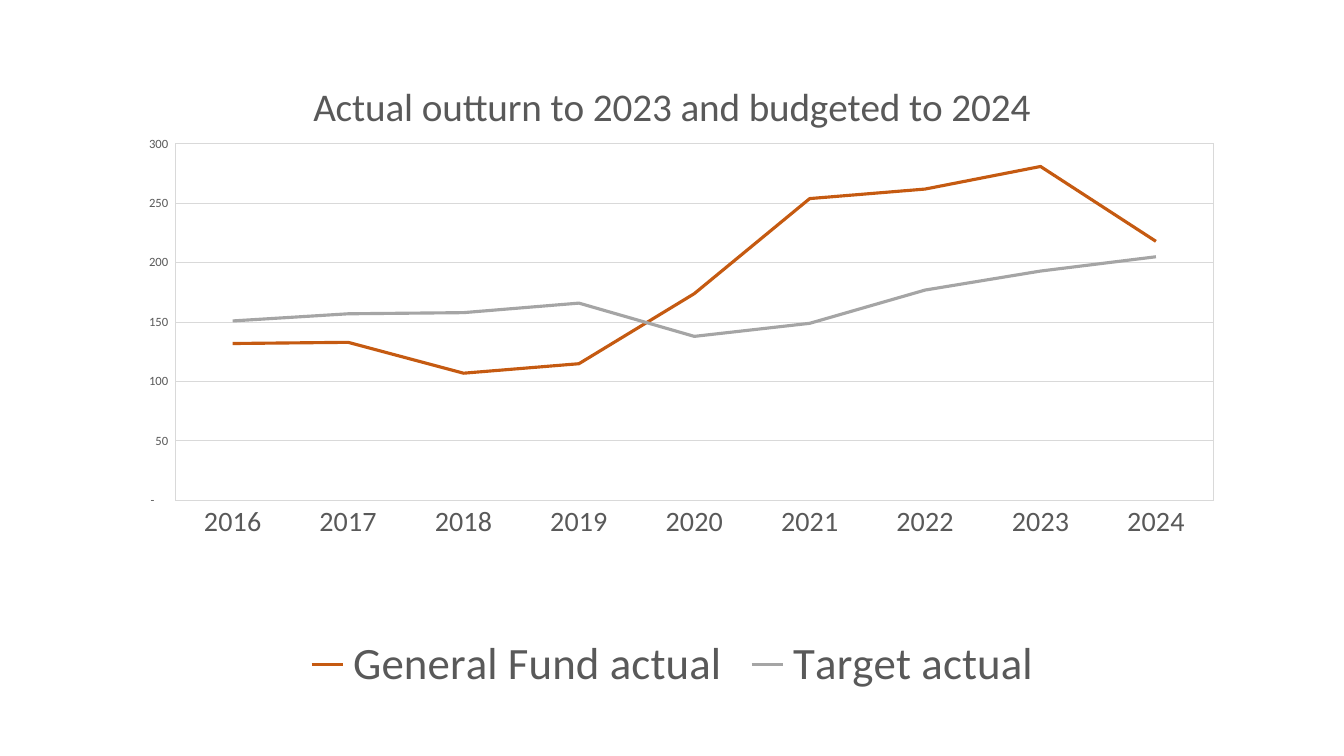
from dataclasses import dataclass

from lxml import etree
from pptx import Presentation
from pptx.chart.chart import Chart
from pptx.chart.data import CategoryChartData
from pptx.dml.color import RGBColor
from pptx.enum.chart import XL_CHART_TYPE, XL_LEGEND_POSITION, XL_TICK_MARK
from pptx.oxml import parse_xml
from pptx.oxml.ns import nsdecls, qn
from pptx.util import Inches, Pt

LINE_CHART = XL_CHART_TYPE.LINE
LEGEND_BOTTOM = XL_LEGEND_POSITION.BOTTOM
NO_TICKS = XL_TICK_MARK.NONE
BLANK_LAYOUT = 6


@dataclass(frozen=True)
class Theme:
    font: str = "Calibri"
    text: str = "595959"
    grid: str = "D9D9D9"
    title_size: int = 28
    year_size: int = 20
    amount_size: int = 9
    legend_size: int = 32
    grid_width: float = 0.75
    series_width: float = 2.25


@dataclass(frozen=True)
class Fund:
    name: str
    amounts: tuple[int, ...]
    color: str


THEME = Theme()
TITLE = "Actual outturn to 2023 and budgeted to 2024"
YEARS = [str(year) for year in range(2016, 2025)]
AMOUNT_FORMAT = '_-* #,##0_-;\\-* #,##0_-;_-* "-"??_-;_-@_'
FUNDS = (
    Fund("General Fund actual", (132, 133, 107, 115, 174, 254, 262, 281, 218), "C55A11"),
    Fund("Target actual", (151, 157, 158, 166, 138, 149, 177, 193, 205), "A5A5A5"),
)


def style_font(font, size: int) -> None:
    font.name = THEME.font
    font.size = Pt(size)
    font.bold = False
    font.color.rgb = RGBColor.from_string(THEME.text)


def style_line(line, color: str, width: float) -> None:
    line.color.rgb = RGBColor.from_string(color)
    line.width = Pt(width)


def set_layout(parent: etree._Element, index: int, **settings: str | float) -> None:
    """Place a chart part by fractions of the chart's size."""
    for layout in parent.findall(qn("c:layout")):
        parent.remove(layout)
    items = "".join(f'<c:{key} val="{value}"/>' for key, value in settings.items())
    parent.insert(index, parse_xml(
        f'<c:layout {nsdecls("c")}><c:manualLayout>{items}</c:manualLayout></c:layout>'))


def style_title(chart: Chart) -> None:
    chart.has_title = True
    heading = chart.chart_title.text_frame
    heading.text = TITLE
    style_font(heading.paragraphs[0].font, THEME.title_size)
    set_layout(chart.chart_title._element, 1, xMode="edge", yMode="edge", x=0.19, y=0.04)


def style_axes(chart: Chart) -> None:
    years, amounts = chart.category_axis, chart.value_axis
    for axis, size in ((years, THEME.year_size), (amounts, THEME.amount_size)):
        axis.major_tick_mark = axis.minor_tick_mark = NO_TICKS
        style_font(axis.tick_labels.font, size)
    style_line(years.format.line, THEME.grid, THEME.grid_width)
    amounts.format.line.fill.background()
    amounts.minimum_scale, amounts.maximum_scale, amounts.major_unit = 0, 300, 50
    amounts.tick_labels.number_format = AMOUNT_FORMAT
    amounts.tick_labels.number_format_is_linked = False
    style_line(amounts.major_gridlines.format.line, THEME.grid, THEME.grid_width)


def style_plot(chart: Chart) -> None:
    plot = chart.plots[0]
    plot.vary_by_categories = False
    for series, fund in zip(plot.series, FUNDS):
        series.smooth = False
        style_line(series.format.line, fund.color, THEME.series_width)

    # Plot position and border
    plot_area = chart._chartSpace.chart.plotArea
    set_layout(plot_area, 0, layoutTarget="inner", xMode="edge", yMode="edge",
               x=0.079, y=0.149, w=0.879, h=0.544)
    plot_area.append(parse_xml(
        f'<c:spPr {nsdecls("c", "a")}><a:noFill/><a:ln w="{Pt(THEME.grid_width)}">'
        f'<a:solidFill><a:srgbClr val="{THEME.grid}"/></a:solidFill></a:ln></c:spPr>'))


def style_legend(chart: Chart) -> None:
    chart.has_legend = True
    chart.legend.position = LEGEND_BOTTOM
    chart.legend.include_in_layout = False
    style_font(chart.legend.font, THEME.legend_size)


def main() -> None:
    deck = Presentation()
    deck.slide_width, deck.slide_height = Inches(13.33), Inches(7.5)
    slide = deck.slides.add_slide(deck.slide_layouts[BLANK_LAYOUT])

    # Fund history
    history = CategoryChartData()
    history.categories = YEARS
    for fund in FUNDS:
        history.add_series(fund.name, fund.amounts)

    # Line chart
    chart = slide.shapes.add_chart(
        LINE_CHART, Inches(0.81), Inches(0.46), Inches(11.72), Inches(6.5), history).chart
    chart.font.name = THEME.font
    chart.font.size = Pt(10)
    style_title(chart)
    style_axes(chart)
    style_plot(chart)
    style_legend(chart)

    deck.save("out.pptx")


if __name__ == "__main__":
    main()
